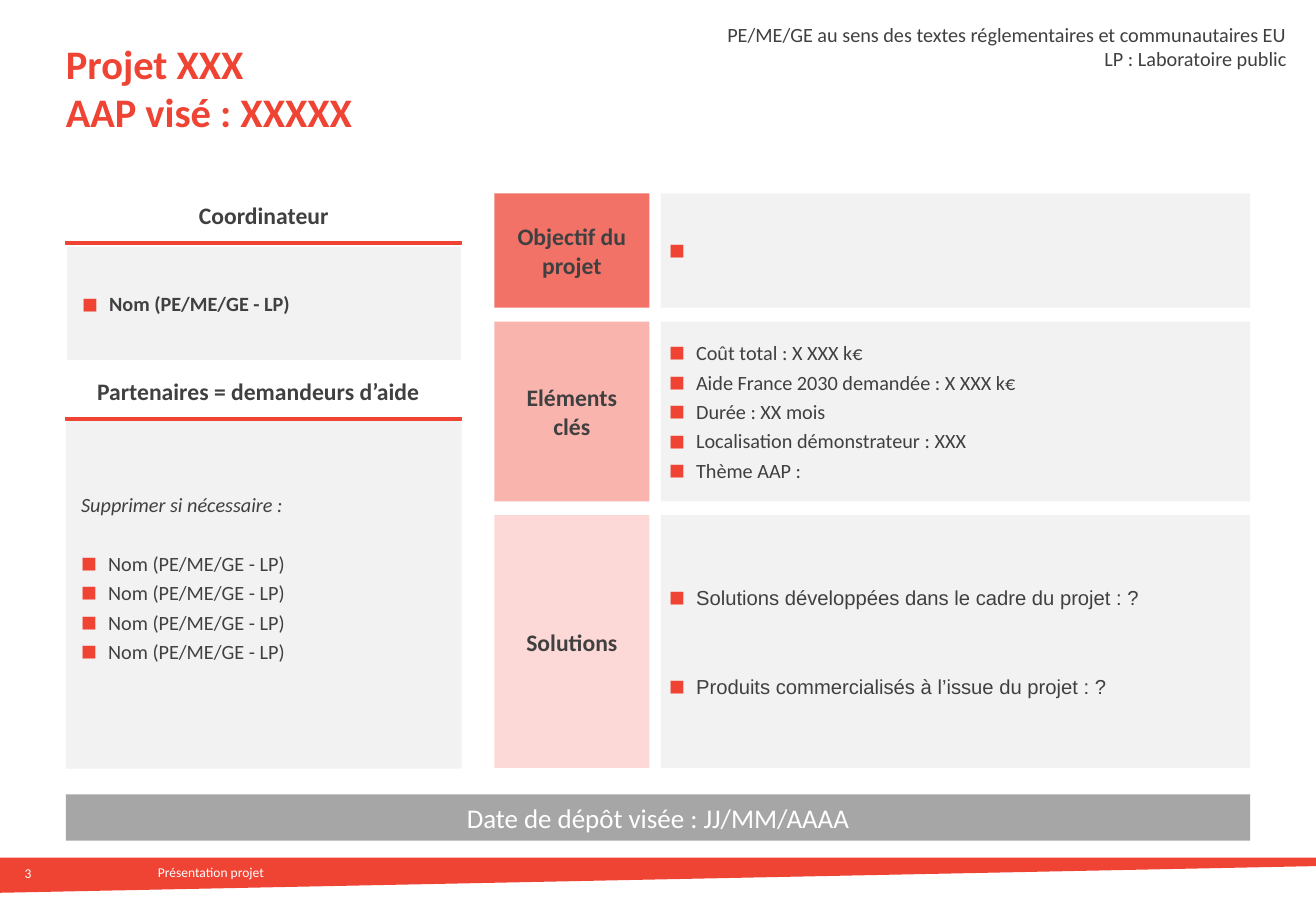
import pptx
import pptx.util
import pptx.dml.color
import pptx.enum.shapes
import pptx.enum.text
import pptx.oxml
import pptx.oxml.ns

Pt = pptx.util.Pt
ALIGN = pptx.enum.text.PP_ALIGN
ANCHOR = pptx.enum.text.MSO_ANCHOR

COLORS = {
    "red": "EF4333", "coral": "F27268", "salmon": "F9B4AD", "blush": "FCD9D6",
    "panel": "F2F2F2", "grey": "A6A6A6", "text": "404040", "white": "FFFFFF",
}
NAMESPACE = pptx.oxml.ns.nsdecls("a")

TITLE = ["Projet XXX\vAAP visé : XXXXX"]
LEGEND = ["PE/ME/GE au sens des textes réglementaires et communautaires EU",
          "LP : Laboratoire public"]
PARTNER = "Nom (PE/ME/GE - LP)"
PARTNERS_NOTE = "Supprimer si nécessaire :"
HEADINGS = [("Coordinateur", 111, 7), ("Partenaires = demandeurs d’aide", 215.3, 13.5)]
SECTIONS = [
    ("Objectif du projet", "coral", 67.7, [" "], "Calibri", 0),
    ("Eléments\vclés", "salmon", 106.6,
     ["Coût total : X XXX k€", "Aide France 2030 demandée : X XXX k€", "Durée : XX mois",
      "Localisation démonstrateur : XXX", "Thème AAP :"], "Calibri", 0),
    ("Solutions", "blush", 149.8,
     ["Solutions développées dans le cadre du projet : ?",
      "Produits commercialisés à l’issue du projet : ?"], "Arial", 35.3),
]
DEADLINE = "Date de dépôt visée : JJ/MM/AAAA"
FOOTER = "Présentation projet"
PAGE_NUMBER = "3"

PAGE_WIDTH, PAGE_HEIGHT = 780, 540
LEFT, RIGHT = 39, 741
COLUMN_WIDTH = 234.7
LABEL_LEFT, LABEL_WIDTH = 293, 92
PANEL_LEFT = 391.7
SECTIONS_TOP, SECTION_GAP = 114.7, 8.2
BLANK_LINE = 17.6

deck = pptx.Presentation()
deck.slide_width, deck.slide_height = Pt(PAGE_WIDTH), Pt(PAGE_HEIGHT)
page = deck.slides.add_slide(deck.slide_layouts[6])


def color(name):
    return pptx.dml.color.RGBColor.from_string(COLORS[name])


def add_bullet(para):
    properties = para._p.get_or_add_pPr()
    properties.set("marL", str(Pt(18)))
    properties.set("indent", str(-Pt(16)))
    for markup in (
        f'<a:buClr {NAMESPACE}><a:srgbClr val="{COLORS["red"]}"/></a:buClr>',
        f'<a:buSzPct {NAMESPACE} val="130000"/>',
        f'<a:buFont {NAMESPACE} typeface="Arial"/>',
        f'<a:buChar {NAMESPACE} char="■"/>',
    ):
        properties.append(pptx.oxml.parse_xml(markup))


def write(frame, lines, size, ink="text", font="Calibri", bold=False, align=ALIGN.LEFT,
          bullets=False, gap=0):
    for index, line in enumerate(lines):
        para = frame.paragraphs[0] if index == 0 else frame.add_paragraph()
        para.text = line
        para.alignment = align
        if bullets:
            add_bullet(para)
            para.space_after = Pt(3)
            if index and gap:
                para.space_before = Pt(gap)
        for span in para.runs:
            span.font.size = Pt(size)
            span.font.name = font
            span.font.bold = bold
            span.font.color.rgb = color(ink)


def set_frame(shape, insets, anchor):
    frame = shape.text_frame
    frame.word_wrap = True
    frame.vertical_anchor = anchor
    frame.margin_left, frame.margin_top, frame.margin_right, frame.margin_bottom = map(Pt, insets)
    return frame


def add_text(left, top, width, height, insets=(0, 0, 0, 0), anchor=ANCHOR.TOP):
    box = page.shapes.add_textbox(Pt(left), Pt(top), Pt(width), Pt(height))
    return set_frame(box, insets, anchor)


def paint(shape, fill):
    shape.shadow.inherit = False
    shape.fill.solid()
    shape.fill.fore_color.rgb = color(fill)
    shape.line.fill.background()


def add_box(left, top, width, height, fill, insets=(0, 0, 0, 0), anchor=ANCHOR.MIDDLE):
    box = page.shapes.add_shape(pptx.enum.shapes.MSO_SHAPE.RECTANGLE,
                                Pt(left), Pt(top), Pt(width), Pt(height))
    paint(box, fill)
    set_frame(box, insets, anchor)
    return box


def add_heading(text, top, right_inset):
    box = add_box(LEFT, top, COLUMN_WIDTH, 31.7, "white", (7, 7, right_inset, 7), ANCHOR.BOTTOM)
    box.line.color.rgb = color("white")
    box.line.width = Pt(0.75)
    effects = box._element.spPr.find(pptx.oxml.ns.qn("a:effectLst"))
    effects.append(pptx.oxml.parse_xml(
        f'<a:outerShdw {NAMESPACE} blurRad="0" dist="{Pt(2)}" dir="5400000" algn="t" '
        f'rotWithShape="0"><a:srgbClr val="{COLORS["red"]}"/></a:outerShdw>'))
    write(box.text_frame, [text], 14, bold=True, align=ALIGN.CENTER)


def add_coordinator():
    table = page.shapes.add_table(1, 1, Pt(39.5), Pt(146), Pt(234), Pt(69)).table
    table.first_row = table.horz_banding = False
    cell = table.cell(0, 0)
    cell.fill.solid()
    cell.fill.fore_color.rgb = color("panel")
    cell.vertical_anchor = ANCHOR.MIDDLE
    write(cell.text_frame, [PARTNER], 12, bold=True, bullets=True)
    cell._tc.get_or_add_tcPr().insert(0, pptx.oxml.parse_xml(
        f'<a:lnB {NAMESPACE} w="{Pt(3)}"><a:solidFill><a:srgbClr val="{COLORS["white"]}"/>'
        f'</a:solidFill></a:lnB>'))


def add_partners():
    box = add_box(LEFT, 247, COLUMN_WIDTH, 208.6, "panel", (7.2, 3.6, 7.2, 3.6 + BLANK_LINE))
    frame = box.text_frame
    write(frame, [PARTNERS_NOTE] + [PARTNER] * 4, 12, bullets=True)
    note, first_partner = frame.paragraphs[:2]
    properties = note._p.pPr
    properties.set("marL", str(Pt(2)))
    properties.set("indent", "0")
    for tag in ("a:buClr", "a:buSzPct", "a:buFont", "a:buChar"):
        properties.remove(properties.find(pptx.oxml.ns.qn(tag)))
    properties.append(pptx.oxml.parse_xml(f"<a:buNone {NAMESPACE}/>"))
    note.runs[0].font.italic = True
    first_partner.space_before = Pt(BLANK_LINE)


def add_sections():
    top = SECTIONS_TOP
    for label, fill, height, lines, font, gap in SECTIONS:
        heading = add_box(LABEL_LEFT, top, LABEL_WIDTH, height, fill)
        write(heading.text_frame, [label], 14, bold=True, align=ALIGN.CENTER)
        panel = add_box(PANEL_LEFT, top, RIGHT - PANEL_LEFT, height, "panel", (2.9,) * 4)
        write(panel.text_frame, lines, 12, font=font, bullets=True, gap=gap)
        top += height + SECTION_GAP


def add_footer():
    outline = page.shapes.build_freeform(Pt(0), Pt(508.3))
    outline.add_line_segments([(Pt(PAGE_WIDTH), Pt(508.3)), (Pt(PAGE_WIDTH), Pt(513.4)),
                               (Pt(0), Pt(529.2))], close=True)
    paint(outline.convert_to_shape(), "red")
    write(add_text(93.6, 512, 80, 10), [FOOTER], 8, "white")
    write(add_text(4.3, 512.6, 14.4, 10, anchor=ANCHOR.MIDDLE), [PAGE_NUMBER], 8, "white",
          align=ALIGN.RIGHT)


add_footer()
write(add_text(LEFT, 21.6, RIGHT - LEFT, 60.5, (0, 3.6, 0, 3.6), ANCHOR.MIDDLE),
      TITLE, 24, "red", bold=True)
write(add_text(418.3, 9.4, 351.4, 36, (7.2, 3.6, 7.2, 3.6)), LEGEND, 12, align=ALIGN.RIGHT)
add_sections()
add_coordinator()
add_partners()
for heading_text, heading_top, heading_inset in HEADINGS:
    add_heading(heading_text, heading_top, heading_inset)
deadline = add_box(LEFT, 470.9, RIGHT - LEFT, 27.4, "grey")
write(deadline.text_frame, [DEADLINE], 16, "white", align=ALIGN.CENTER)

deck.save("out.pptx")
